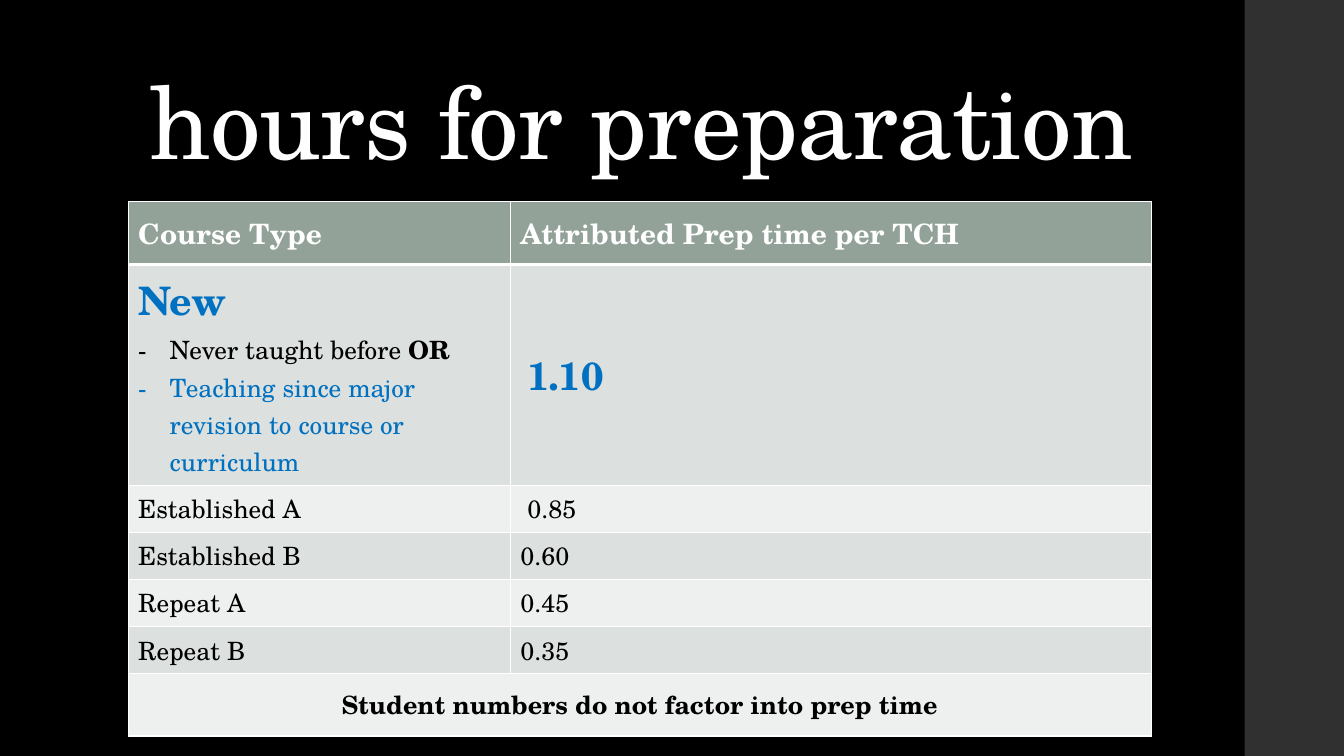
import pptx
import pptx.util
import pptx.dml.color
import pptx.enum.shapes
import pptx.enum.text
import pptx.oxml
import pptx.oxml.ns

Pt = pptx.util.Pt
RGB = pptx.dml.color.RGBColor
ANCHOR = pptx.enum.text.MSO_ANCHOR
ALIGN = pptx.enum.text.PP_ALIGN

FONT = "TeX Gyre Schola"
BLACK = RGB(0x00, 0x00, 0x00)
WHITE = RGB(0xFF, 0xFF, 0xFF)
CHARCOAL = RGB(0x30, 0x30, 0x30)
SAGE = RGB(0x93, 0xA2, 0x99)
BAND_DARK = RGB(0xDC, 0xE0, 0xDE)
BAND_LIGHT = RGB(0xEE, 0xF0, 0xEF)
BLUE = RGB(0x00, 0x70, 0xC0)

SLIDE_W, SLIDE_H = 960, 540
COL_WIDTHS = [273, 458]
HEADER_H, NEW_H, COURSE_H, NOTE_H = 45, 157.5, 33.6, 44.6
COURSES = [
    ("Established A", " 0.85"),
    ("Established B", "0.60"),
    ("Repeat A", "0.45"),
    ("Repeat B", "0.35"),
]


def add_text(p, text, size=18, color=BLACK, bold=False, spacing=None):
    r = p.add_run()
    r.text = text
    r.font.name = FONT
    r.font.size = Pt(size)
    r.font.color.rgb = color
    r.font.bold = bold
    if spacing is not None:
        r.font._element.set("spc", str(int(spacing * 100)))


def add_dash(p, color, indent=22.5):
    """Give the paragraph a hanging dash bullet."""
    pPr = p._p.get_or_add_pPr()
    pPr.set("marL", str(Pt(indent)))
    pPr.set("indent", str(-Pt(indent)))
    ns = pptx.oxml.ns.nsdecls("a")
    for xml in (
        f'<a:buClr {ns}><a:srgbClr val="{color}"/></a:buClr>',
        f'<a:buFont {ns} typeface="{FONT}"/>',
        f'<a:buChar {ns} char="-"/>',
    ):
        pPr.append(pptx.oxml.parse_xml(xml))


def style_cell(cell, fill, bottom=1):
    """Set fill, white borders and middle anchoring."""
    cell.vertical_anchor = ANCHOR.MIDDLE
    tcPr = cell._tc.get_or_add_tcPr()
    for side, width in (("L", 1), ("R", 1), ("T", 1), ("B", bottom)):
        tcPr.append(pptx.oxml.parse_xml(
            f'<a:ln{side} {pptx.oxml.ns.nsdecls("a")} w="{Pt(width)}">'
            f'<a:solidFill><a:srgbClr val="{WHITE}"/></a:solidFill></a:ln{side}>'))
    cell.fill.solid()
    cell.fill.fore_color.rgb = fill


def add_sidebar(s, x, y, w, h):
    sp = s.shapes.add_shape(pptx.enum.shapes.MSO_SHAPE.RECTANGLE, Pt(x), Pt(y), Pt(w), Pt(h))
    sp.shadow.inherit = False
    sp.fill.solid()
    sp.fill.fore_color.rgb = CHARCOAL
    sp.line.fill.background()


def set_title(s, x, y, w, h):
    sp = s.shapes.title
    sp.left, sp.top, sp.width, sp.height = Pt(x), Pt(y), Pt(w), Pt(h)
    tf = sp.text_frame
    tf.word_wrap = True
    tf.auto_size = pptx.enum.text.MSO_AUTO_SIZE.NONE
    tf.vertical_anchor = ANCHOR.BOTTOM
    p = tf.paragraphs[0]
    p.alignment = ALIGN.LEFT
    p.line_spacing = 0.9
    add_text(p, "hours for preparation", size=72, color=WHITE, spacing=-0.5)


def fill_new_course(type_cell, time_cell):
    tf = type_cell.text_frame
    add_text(tf.paragraphs[0], "New", size=28, color=BLUE, bold=True)
    p = tf.add_paragraph()
    add_dash(p, BLACK)
    add_text(p, "Never taught before ")
    add_text(p, "OR", bold=True)
    p = tf.add_paragraph()
    add_dash(p, BLUE)
    add_text(p, "Teaching since major revision to course or curriculum", color=BLUE)
    p = time_cell.text_frame.paragraphs[0]
    add_text(p, " ")
    add_text(p, "1.10", size=28, color=BLUE, bold=True)


def add_prep_table(s, x, y):
    heights = [HEADER_H, NEW_H] + [COURSE_H] * len(COURSES) + [NOTE_H]
    table = s.shapes.add_table(len(heights), len(COL_WIDTHS), Pt(x), Pt(y),
                               Pt(sum(COL_WIDTHS)), Pt(sum(heights))).table
    for column, width in zip(table.columns, COL_WIDTHS):
        column.width = Pt(width)
    for i, height in enumerate(heights):
        table.rows[i].height = Pt(height)
        band = BAND_DARK if i % 2 else BAND_LIGHT
        for cell in table.rows[i].cells:
            style_cell(cell, band if i else SAGE, bottom=1 if i else 3)

    for j, heading in enumerate(("Course Type", "Attributed Prep time per TCH")):
        add_text(table.cell(0, j).text_frame.paragraphs[0], heading,
                 size=20, color=WHITE, bold=True)
    fill_new_course(table.cell(1, 0), table.cell(1, 1))
    for i, course in enumerate(COURSES, start=2):
        for j, text in enumerate(course):
            add_text(table.cell(i, j).text_frame.paragraphs[0], text)

    last = len(heights) - 1
    note = table.cell(last, 0)
    note.merge(table.cell(last, 1))
    p = note.text_frame.paragraphs[0]
    p.alignment = ALIGN.CENTER
    add_text(p, "Student numbers do not factor into prep time", bold=True)


def main():
    prs = pptx.Presentation()
    prs.slide_width, prs.slide_height = Pt(SLIDE_W), Pt(SLIDE_H)
    s = prs.slides.add_slide(prs.slide_layouts[5])
    s.background.fill.solid()
    s.background.fill.fore_color.rgb = BLACK
    add_sidebar(s, 889, 0, SLIDE_W - 889, SLIDE_H)
    set_title(s, 99.4, 28.8, 763, 104.4)
    add_prep_table(s, 91.5, 144)
    prs.save("out.pptx")


if __name__ == "__main__":
    main()
